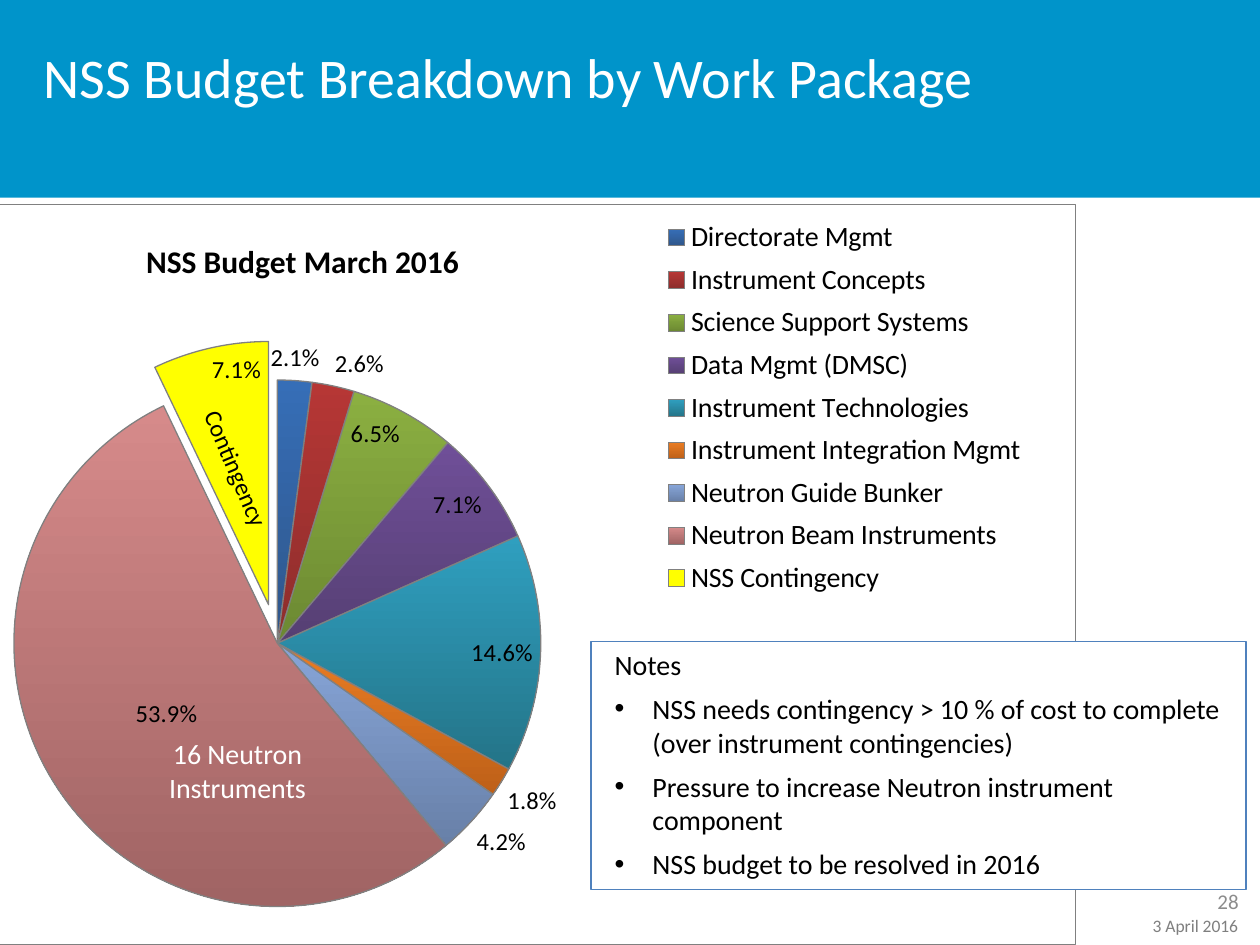
from dataclasses import dataclass

from pptx import Presentation, util as u
from pptx.chart.data import ChartData
from pptx.dml.color import RGBColor
from pptx.enum import chart as charts, shapes, text
from pptx.oxml import parse_xml
from pptx.oxml.ns import nsdecls, qn

In = u.Inches
ALIGN = text.PP_ALIGN
LABEL = charts.XL_LABEL_POSITION


@dataclass(frozen=True)
class Theme:
    """Colours, font and type sizes of the deck."""
    font: str = "Calibri"
    band: str = "0094CA"
    white: str = "FFFFFF"
    ink: str = "000000"
    rule: str = "808080"
    frame: str = "4F81BD"
    date: str = "7F7F7F"
    number: str = "8C8C8C"
    title: int = 32
    heading: int = 18
    body: int = 16
    label: int = 14
    page: int = 12
    small: int = 10


THEME = Theme()
PACKAGES = [
    ("Directorate Mgmt", 0.021, "366EB7", "2F568A", LABEL.OUTSIDE_END),
    ("Instrument Concepts", 0.026, "B63735", "8D2D2C", LABEL.OUTSIDE_END),
    ("Science Support Systems", 0.065, "8BAF41", "6C8932", LABEL.INSIDE_END),
    ("Data Mgmt (DMSC)", 0.071, "6F4F98", "563F73", LABEL.INSIDE_END),
    ("Instrument Technologies", 0.146, "2F9FBF", "247488", LABEL.INSIDE_END),
    ("Instrument Integration Mgmt", 0.018, "EA7D24", "BE6018", LABEL.OUTSIDE_END),
    ("Neutron Guide Bunker", 0.042, "87A5D8", "6880A8", LABEL.OUTSIDE_END),
    ("Neutron Beam Instruments", 0.539, "D68A8A", "A06464", LABEL.CENTER),
    ("NSS Contingency", 0.071, "FFFF00", "FFFF00", LABEL.INSIDE_END),
]
NOTES = [
    "NSS needs contingency > 10 % of cost to complete (over instrument contingencies)",
    "Pressure to increase Neutron instrument component",
    "NSS budget to be resolved in 2016",
]


def rgb(value):
    """Turn a hex string into a colour."""
    return RGBColor.from_string(value)


def style_font(font, size, colour, bold=False):
    """Apply the theme font with a size and colour."""
    font.name, font.size, font.bold = THEME.font, u.Pt(size), bold
    font.color.rgb = rgb(colour)


def add_run(paragraph, words, size, colour):
    """Append one styled run."""
    run = paragraph.add_run()
    run.text = words
    style_font(run.font, size, colour)


def add_panel(slide, box, fill, line=None):
    """Draw a flat rectangle."""
    panel = slide.shapes.add_shape(shapes.MSO_SHAPE.RECTANGLE, *map(In, box))
    panel.shadow.inherit = False
    panel.fill.solid()
    panel.fill.fore_color.rgb = rgb(fill)
    if line:
        panel.line.color.rgb = rgb(line)
        panel.line.width = u.Pt(0.75)
    else:
        panel.line.fill.background()
    return panel


def add_label(slide, box, words, size, colour, align=ALIGN.LEFT,
              anchor=text.MSO_ANCHOR.TOP, rotation=0):
    """Place a one-paragraph wrapped text box."""
    label = slide.shapes.add_textbox(*map(In, box))
    label.rotation = rotation
    frame = label.text_frame
    frame.word_wrap = True
    frame.vertical_anchor = anchor
    frame.paragraphs[0].alignment = align
    add_run(frame.paragraphs[0], words, size, colour)


def add_header(slide, box):
    """Draw the title band and its title."""
    left, top, width, height = box
    add_panel(slide, box, THEME.band)
    add_label(slide, (left, top + 0.29, width - 1.93, 0.95),
              "NSS Budget Breakdown by Work Package",
              THEME.title, THEME.white, ALIGN.CENTER)


def set_layout(parent, index, target=None, **fractions):
    """Give a chart part a manual layout in fractions of the chart."""
    for old in parent.findall(qn("c:layout")):
        parent.remove(old)
    inner = f'<c:layoutTarget val="{target}"/>' if target else ""
    inner += "".join(f'<c:{axis}Mode val="edge"/>' for axis in "xy")
    inner += "".join(f'<c:{key} val="{value}"/>' for key, value in fractions.items())
    parent.insert(index, parse_xml(
        f'<c:layout {nsdecls("c")}><c:manualLayout>{inner}</c:manualLayout></c:layout>'))


def style_slice(point, top, bottom, position):
    """Colour one pie slice and place its label."""
    fill = point.format.fill
    if top == bottom:
        fill.solid()
        fill.fore_color.rgb = rgb(top)
    else:
        fill.gradient()
        fill.gradient_angle = 270
        for stop, colour in zip(fill.gradient_stops, (top, bottom)):
            stop.color.rgb = rgb(colour)
    point.format.line.color.rgb = rgb(THEME.rule)
    point.format.line.width = u.Pt(0.75)
    style_font(point.data_label.font, THEME.label, THEME.ink)
    point.data_label.position = position


def add_budget_pie(slide, box):
    """Build the budget pie with its title, legend and captions."""
    left, top, _, _ = box
    data = ChartData(number_format="0.0%")
    data.categories = [package[0] for package in PACKAGES]
    data.add_series("Series 1", [package[1] for package in PACKAGES])
    chart = slide.shapes.add_chart(
        charts.XL_CHART_TYPE.PIE, *map(In, box), data).chart
    style_font(chart.font, THEME.small, THEME.ink)

    chart.has_title = True
    heading = chart.chart_title.text_frame.paragraphs[0].add_run()
    heading.text = "NSS Budget March 2016"
    style_font(heading.font, THEME.heading, THEME.ink, bold=True)
    set_layout(chart.chart_title._element, 1, x=0.15, y=0.04)

    chart.has_legend = True
    chart.legend.position = charts.XL_LEGEND_POSITION.RIGHT
    chart.legend.include_in_layout = False
    style_font(chart.legend.font, THEME.body, THEME.ink)
    set_layout(chart.legend._element, 1, x=0.62, y=0.01, w=0.34, h=0.53)

    plot = chart.plots[0]
    plot.vary_by_categories = True
    plot_area = plot._element.getparent()
    set_layout(plot_area, 0, "inner", x=0.035, y=0.234, w=0.479, h=0.718)
    series = plot.series[0]
    labels = series.data_labels
    labels.show_value = True
    labels.number_format, labels.number_format_is_linked = "0.0%", False
    style_font(labels.font, THEME.label, THEME.ink)
    for index, (_, _, light, dark, position) in enumerate(PACKAGES):
        style_slice(series.points[index], light, dark, position)
    contingency = series._element.findall(qn("c:dPt"))[-1]
    contingency.find(qn("c:spPr")).addprevious(
        parse_xml(f'<c:explosion {nsdecls("c")} val="15"/>'))

    plot_area.getparent().addnext(parse_xml(
        f'<c:spPr {nsdecls("c", "a")}><a:noFill/><a:ln w="9525"><a:solidFill>'
        f'<a:srgbClr val="{THEME.rule}"/></a:solidFill></a:ln></c:spPr>'))

    add_label(slide, (left + 1.18, top + 4.18, 1.81, 0.64),
              "16 Neutron Instruments", THEME.body, THEME.white, ALIGN.CENTER)
    add_label(slide, (left + 1.41, top + 1.93, 1.33, 0.34), "Contingency",
              THEME.label, THEME.ink, ALIGN.CENTER, rotation=67)


def add_notes_box(slide, box):
    """Draw the framed list of notes."""
    frame = add_panel(slide, box, THEME.white, THEME.frame).text_frame
    frame.word_wrap = True
    frame.vertical_anchor = text.MSO_ANCHOR.TOP
    for index, words in enumerate(["Notes"] + NOTES):
        paragraph = frame.add_paragraph() if index else frame.paragraphs[0]
        paragraph.alignment = ALIGN.LEFT
        properties = paragraph._p.get_or_add_pPr()
        properties.set("marL", str(In(0.39 if index else 0.09)))
        if index:
            properties.set("indent", str(In(-0.3)))
            properties.append(parse_xml(f'<a:buFont {nsdecls("a")} typeface="Arial"/>'))
            properties.append(parse_xml(f'<a:buChar {nsdecls("a")} char="•"/>'))
            paragraph.space_before = u.Pt(6)
        add_run(paragraph, words, THEME.body, THEME.ink)


def add_footer(slide, box):
    """Place the slide number above the date."""
    left, top, width, _ = box
    add_label(slide, (left, top, width, 0.4), "28", THEME.page, THEME.number,
              ALIGN.RIGHT, text.MSO_ANCHOR.MIDDLE)
    add_label(slide, (left + 1.45, top + 0.26, 0.95, 0.27), "3 April 2016",
              THEME.small, THEME.date)


def main():
    """Assemble and save the slide."""
    deck = Presentation()
    deck.slide_width, deck.slide_height = In(10), In(7.5)
    slide = deck.slides.add_slide(deck.slide_layouts[6])
    add_header(slide, (0, 0, 10, 1.57))
    add_budget_pie(slide, (-0.2, 1.62, 8.74, 5.88))
    add_notes_box(slide, (4.69, 5.09, 5.2, 1.97))
    add_footer(slide, (7.6, 6.95, 2.33, 0.53))
    deck.save("out.pptx")


if __name__ == "__main__":
    main()
